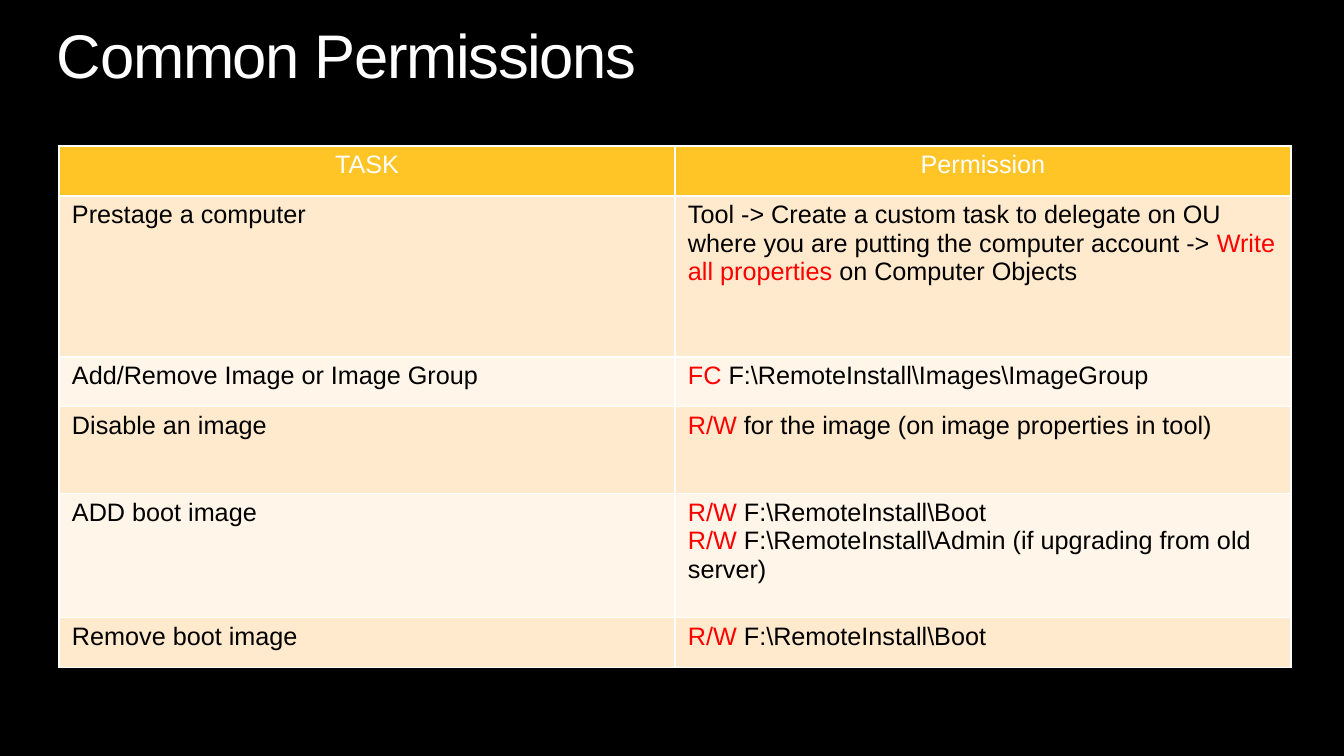
import pptx
import pptx.util
import pptx.dml.color
import pptx.enum.text
import lxml.etree
import pptx.oxml.ns


def px(length):
    return pptx.util.Emu(round(length * 12192000 / 1344))


def color(value):
    return pptx.dml.color.RGBColor.from_string(value)


WHITE, BLACK, RED = "FFFFFF", "000000", "FF0000"
GOLD, SAND, CREAM = "FFC425", "FFEACD", "FFF5E8"

presentation = pptx.Presentation()
presentation.slide_width = px(1344)
presentation.slide_height = px(756)
slide = presentation.slides.add_slide(presentation.slide_layouts[6])
slide.background.fill.solid()
slide.background.fill.fore_color.rgb = color(BLACK)

title = slide.shapes.add_textbox(px(57), px(25), px(1229), px(67))
title_frame = title.text_frame
title_frame.word_wrap = True
title_frame.margin_left = title_frame.margin_right = 0
title_frame.margin_top = title_frame.margin_bottom = 0
title_frame.text = "Common Permissions"
title_paragraph = title_frame.paragraphs[0]
title_paragraph.line_spacing = 0.9
title_run = title_paragraph.runs[0]
title_run.font.name = "Arial"
title_run.font.size = pptx.util.Pt(44)
title_run.font.color.rgb = color(WHITE)
title_run.font._element.set("spc", "-100")

permissions = [
    ("TASK", [[("Permission", WHITE)]], 50),
    ("Prestage a computer", [[
        ("Tool -> Create a custom task to delegate on OU where you are "
         "putting the computer account -> ", BLACK),
        ("Write all properties ", RED),
        ("on Computer Objects", BLACK)]], 161),
    ("Add/Remove Image or Image Group", [[
        ("FC", RED), (r" F:\RemoteInstall\Images\ImageGroup", BLACK)]], 50),
    ("Disable an image", [[
        ("R/W", RED), (" for the image (on image properties in tool)", BLACK)]], 87),
    ("ADD boot image", [
        [("R/W", RED), (r" F:\RemoteInstall\Boot", BLACK)],
        [("R/W", RED),
         (r" F:\RemoteInstall\Admin (if upgrading from old server)", BLACK)]], 124),
    ("Remove boot image", [[
        ("R/W", RED), (r" F:\RemoteInstall\Boot", BLACK)]], 50),
]

table_height = sum(height for task, lines, height in permissions)
table = slide.shapes.add_table(
    len(permissions), 2, px(59), px(146), px(1232), px(table_height)).table
for column in table.columns:
    column.width = px(616)

for row_index, (task, lines, height) in enumerate(permissions):
    table.rows[row_index].height = px(height)
    is_header = row_index == 0
    fill = GOLD if is_header else SAND if row_index % 2 else CREAM
    task_lines = [[(task, WHITE if is_header else BLACK)]]
    for column_index, cell_lines in enumerate((task_lines, lines)):
        cell = table.cell(row_index, column_index)
        cell.margin_left = cell.margin_right = px(13)
        cell.margin_top = cell.margin_bottom = px(5)
        properties = cell._tc.get_or_add_tcPr()
        for side in "LRTB":
            border = lxml.etree.SubElement(
                properties, pptx.oxml.ns.qn(f"a:ln{side}"),
                w=str(pptx.util.Pt(1)))
            border_fill = lxml.etree.SubElement(
                border, pptx.oxml.ns.qn("a:solidFill"))
            lxml.etree.SubElement(
                border_fill, pptx.oxml.ns.qn("a:srgbClr"), val=WHITE)
        cell.fill.solid()
        cell.fill.fore_color.rgb = color(fill)
        cell.text_frame.text = "\n".join(
            "".join(text for text, shade in line) for line in cell_lines)
        for paragraph, line in zip(cell.text_frame.paragraphs, cell_lines):
            if is_header:
                paragraph.alignment = pptx.enum.text.PP_ALIGN.CENTER
            paragraph.clear()
            for text, shade in line:
                run = paragraph.add_run()
                run.text = text
                run.font.name = "Arial"
                run.font.size = pptx.util.Pt(18)
                run.font.bold = False
                run.font.color.rgb = color(shade)

presentation.save("out.pptx")
